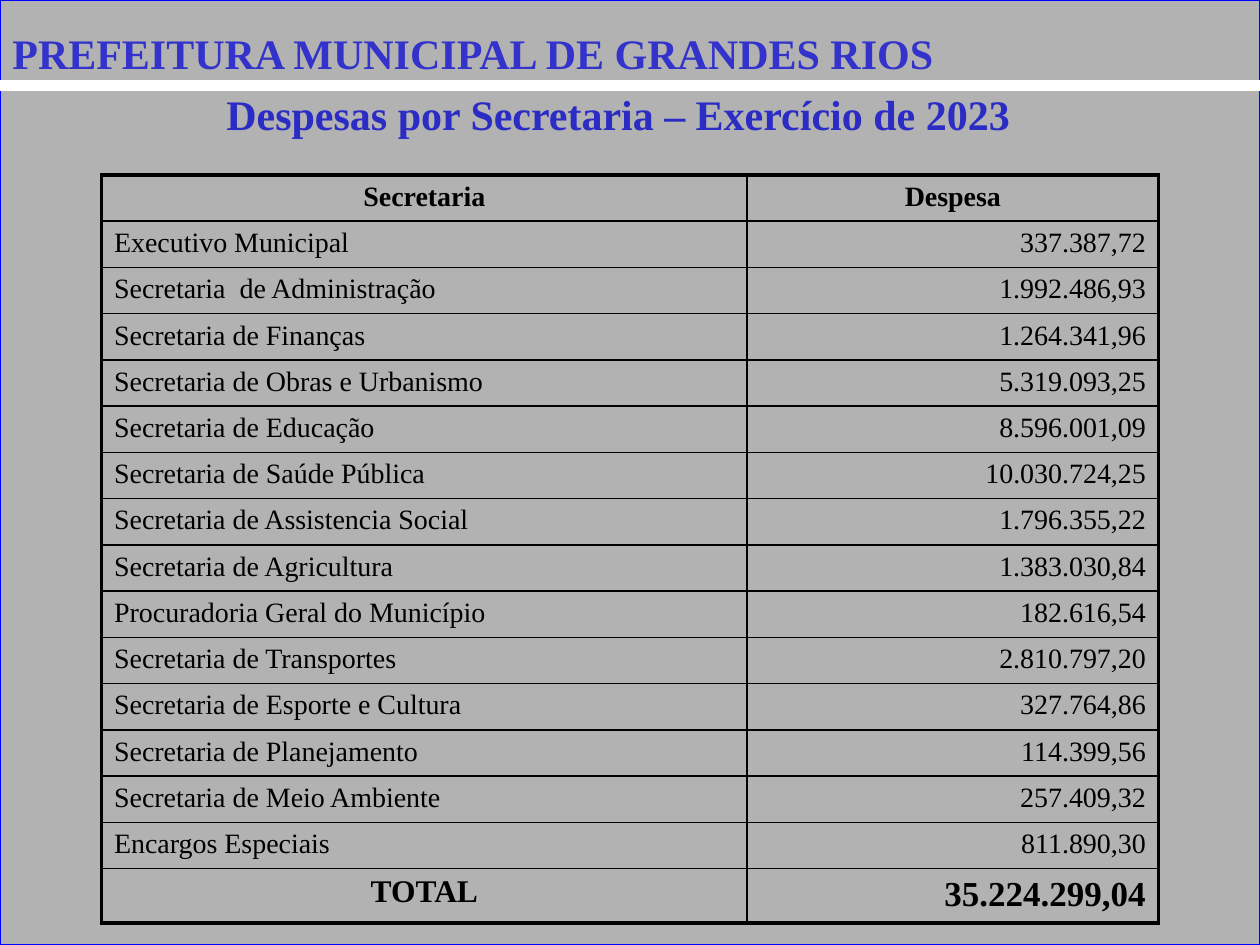
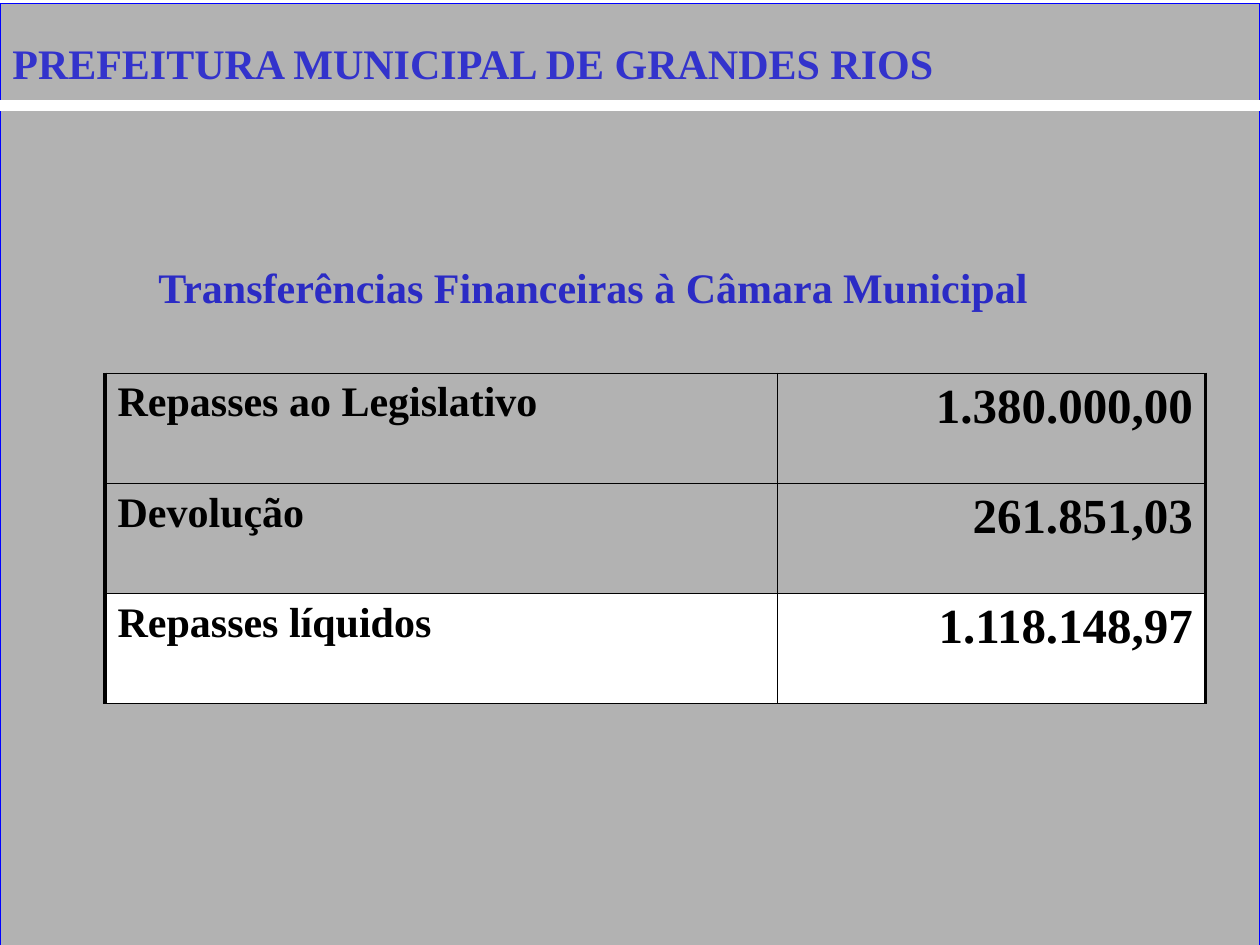
from lxml.etree import SubElement
from pptx import Presentation
from pptx.dml.color import RGBColor
from pptx.enum.shapes import MSO_CONNECTOR, MSO_SHAPE
from pptx.enum.text import MSO_ANCHOR, PP_ALIGN
from pptx.oxml.ns import qn
from pptx.util import Pt

GREY = RGBColor(0xB2, 0xB2, 0xB2)
SHADE = RGBColor(0x80, 0x80, 0x80)
WHITE = RGBColor(0xFF, 0xFF, 0xFF)
BLACK = RGBColor(0, 0, 0)
EDGE = RGBColor(0, 0, 0xFF)
BLUE = RGBColor(0x33, 0x33, 0xCC)
NAVY = RGBColor(0x2B, 0x2B, 0xC5)
LEFT, MID, RIGHT = PP_ALIGN.LEFT, PP_ALIGN.CENTER, PP_ALIGN.RIGHT
WIDE, HIGH = 720, 540
THIN, THICK = 1, 2.25

COSTS = [
    ("Executivo Municipal", "337.387,72"),
    ("Secretaria  de Administração", "1.992.486,93"),
    ("Secretaria de Finanças", "1.264.341,96"),
    ("Secretaria de Obras e Urbanismo", "5.319.093,25"),
    ("Secretaria de Educação", "8.596.001,09"),
    ("Secretaria de Saúde Pública", "10.030.724,25"),
    ("Secretaria de Assistencia Social", "1.796.355,22"),
    ("Secretaria de Agricultura", "1.383.030,84"),
    ("Procuradoria Geral do Município", "182.616,54"),
    ("Secretaria de Transportes", "2.810.797,20"),
    ("Secretaria de Esporte e Cultura", "327.764,86"),
    ("Secretaria de Planejamento", "114.399,56"),
    ("Secretaria de Meio Ambiente", "257.409,32"),
    ("Encargos Especiais", "811.890,30"),
]
GRANTS = [
    ("Repasses ao Legislativo", "1.380.000,00"),
    ("Devolução", "261.851,03"),
    ("Repasses líquidos", "1.118.148,97"),
]


class Deck:
    """Shared style plus the slide being filled."""

    def __init__(self):
        self.file = Presentation()
        self.file.slide_width, self.file.slide_height = Pt(WIDE), Pt(HIGH)
        self.font = {"name": "Times New Roman", "bold": True}

    def page(self, top, head, rule):
        """Start a slide with grey ground, white rule and town name."""
        self.slide = self.file.slides.add_slide(self.file.slide_layouts[6])
        self.ground(top)
        self.rule(rule)
        run = self.text("PREFEITURA MUNICIPAL DE GRANDES RIOS",
                        0, head, 683.3, LEFT, BLUE)
        self.shade(run)

    def ground(self, top):
        box = self.slide.shapes.add_shape(
            MSO_SHAPE.RECTANGLE, 0, Pt(top), Pt(WIDE), Pt(HIGH))
        box.shadow.inherit = False
        box.fill.solid()
        box.fill.fore_color.rgb = GREY
        box.line.color.rgb = EDGE
        box.line.width = Pt(0.75)

    def rule(self, y):
        line = self.slide.shapes.add_connector(
            MSO_CONNECTOR.STRAIGHT, 0, Pt(y), Pt(WIDE), Pt(y))
        line.line.color.rgb = WHITE
        line.line.width = Pt(6)
        SubElement(line._element.spPr, qn("a:effectLst"))

    def label(self, para, words, align, color, **form):
        """Put one styled run into a paragraph."""
        para.alignment = align
        run = para.add_run()
        run.text = words
        for key, value in {**self.font, **form}.items():
            setattr(run.font, key, value)
        run.font.color.rgb = color
        return run

    def text(self, words, x, y, width, align, color):
        box = self.slide.shapes.add_textbox(Pt(x), Pt(y), Pt(width), Pt(36))
        frame = box.text_frame
        form = {"word_wrap": True, "margin_top": Pt(6.2),
                "margin_bottom": 0, "vertical_anchor": MSO_ANCHOR.TOP}
        for key, value in form.items():
            setattr(frame, key, value)
        return self.label(frame.paragraphs[0], words, align, color, size=Pt(24))

    def shade(self, run):
        """Drop a grey shadow behind the letters."""
        props = run._r.get_or_add_rPr()
        effect = SubElement(props, qn("a:effectLst"))
        props.find(qn("a:solidFill")).addnext(effect)
        drop = SubElement(effect, qn("a:outerShdw"),
                          dist=str(Pt(2)), dir="2700000", algn="tl")
        SubElement(drop, qn("a:srgbClr"), val=str(SHADE))

    def table(self, x, y, cols, rows):
        """Add a plain table of the given column widths and row heights."""
        frame = self.slide.shapes.add_table(
            len(rows), len(cols), Pt(x), Pt(y), Pt(sum(cols)), Pt(sum(rows)))
        grid = frame.table
        grid.first_row = grid.horz_banding = False
        for col, width in zip(grid.columns, cols):
            col.width = Pt(width)
        for row, height in zip(grid.rows, rows):
            row.height = Pt(height)
        return grid

    def cell(self, cell, words, align, size, edges, bold=True, fill=None):
        """Fill one cell; edges are the left, right, top, bottom widths."""
        self.label(cell.text_frame.paragraphs[0], words, align, BLACK,
                   size=Pt(size), bold=bold)
        props = cell._tc.get_or_add_tcPr()
        for side, width in zip("LRTB", edges):
            line = SubElement(props, qn("a:ln" + side), w=str(Pt(width)))
            paint = SubElement(line, qn("a:solidFill"))
            SubElement(paint, qn("a:srgbClr"), val=str(BLACK))
        if fill is None:
            cell.fill.background()
        else:
            cell.fill.solid()
            cell.fill.fore_color.rgb = fill


def costs(deck):
    """Spending by department."""
    deck.page(0, 9.4, 49)
    deck.text("Despesas por Secretaria – Exercício de 2023 ",
              17.3, 44.6, 678, MID, NAVY)
    lines = [("Secretaria", "Despesa"), *COSTS, ("TOTAL", "35.224.299,04")]
    last = len(lines) - 1
    grid = deck.table(58, 100, (369, 235), [26.43] * last + [30.9])
    for r, line in enumerate(lines):
        ends = r in (0, last)
        top = THICK if r == 0 else THIN
        base = THICK if r == last else THIN
        sizes = (18, 20) if r == last else (16, 16)
        aligns = (MID if ends else LEFT, MID if r == 0 else RIGHT)
        sides = ((THICK, THIN), (THIN, THICK))
        for c, words in enumerate(line):
            deck.cell(grid.cell(r, c), words, aligns[c], sizes[c],
                      (*sides[c], top, base), bold=ends)


def grants(deck):
    """Transfers to the town council."""
    deck.page(2, 15.1, 60.2)
    grid = deck.table(60, 213.3, (384.3, 244.5), [62.9] * len(GRANTS))
    for r, (name, value) in enumerate(GRANTS):
        fill = WHITE if r == len(GRANTS) - 1 else None
        deck.cell(grid.cell(r, 0), name, LEFT, 24,
                  (THICK, THIN, THIN, THIN), fill=fill)
        deck.cell(grid.cell(r, 1), value, RIGHT, 28,
                  (THIN, THICK, THIN, THIN), fill=fill)
    deck.text("Transferências Financeiras à Câmara Municipal",
              0, 143.3, 678, MID, NAVY)


def main():
    deck = Deck()
    costs(deck)
    grants(deck)
    deck.file.save("out.pptx")


if __name__ == "__main__":
    main()
